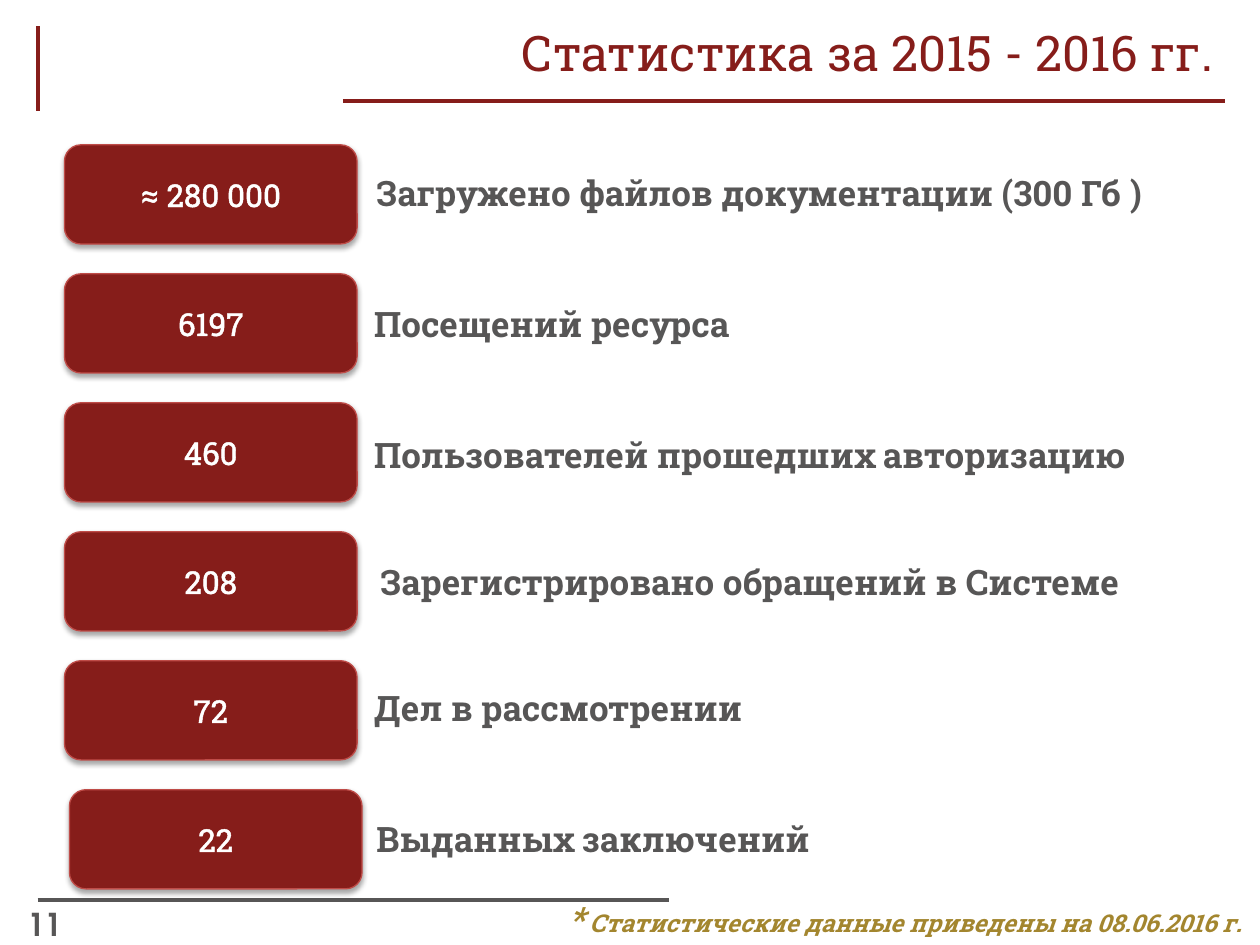
from lxml import etree
from pptx import Presentation
from pptx.dml.color import RGBColor
from pptx.enum.shapes import MSO_CONNECTOR, MSO_SHAPE
from pptx.enum.text import MSO_ANCHOR, MSO_AUTO_SIZE, PP_ALIGN
from pptx.oxml import parse_xml
from pptx.oxml.ns import nsdecls, qn
from pptx.util import Cm, Pt

STRAIGHT = MSO_CONNECTOR.STRAIGHT
ROUNDED = MSO_SHAPE.ROUNDED_RECTANGLE
MIDDLE = MSO_ANCHOR.MIDDLE
NO_FIT = MSO_AUTO_SIZE.NONE
LEFT, CENTER, RIGHT = PP_ALIGN.LEFT, PP_ALIGN.CENTER, PP_ALIGN.RIGHT

FONT = "Roboto Slab"
NUMBER_FONT = "TeX Gyre Adventor"
RED, RED_EDGE = "861D1A", "BF4C48"
GREY, GOLD, WHITE = "575656", "A3862F", "FFFFFF"

# Value, box left, label, label left, label top (cm)
STATS = [
    ("≈ 280 000", 1.3, "Загружено файлов документации (300 Гб )", 7.34, 3.33),
    ("6197", 1.3, "Посещений ресурса", 7.29, 5.97),
    ("460", 1.3, "Пользователей прошедших авторизацию", 7.29, 8.61),
    ("208", 1.3, "Зарегистрировано обращений в Системе", 7.42, 11.18),
    ("72", 1.3, "Дел в рассмотрении", 7.29, 13.72),
    ("22", 1.4, "Выданных заключений", 7.34, 16.36),
]
FIRST_TOP, ROW_STEP = 2.92, 2.6


def rgb(value):
    return RGBColor.from_string(value)


def style(p, size, color, align=LEFT, bold=False, italic=False, name=FONT):
    p.alignment = align
    p.font.size = Pt(size)
    p.font.name = name
    p.font.bold = bold
    p.font.italic = italic
    p.font.color.rgb = rgb(color)


def add_line(s, x1, y1, x2, y2, color):
    line = s.shapes.add_connector(STRAIGHT, Cm(x1), Cm(y1), Cm(x2), Cm(y2))
    line.line.color.rgb = rgb(color)
    line.line.width = Pt(2.25)
    etree.SubElement(line._element.spPr, qn("a:effectLst"))


def add_title(s, text):
    title = s.shapes.title
    title.left, title.top = Cm(8.1), Cm(0.33)
    title.width, title.height = Cm(16.61), Cm(1.42)
    tf = title.text_frame
    tf.text = text
    tf.auto_size = NO_FIT
    tf.vertical_anchor = MIDDLE
    style(tf.paragraphs[0], 28, RED, RIGHT)


def add_text(s, x, y, w, h, text):
    tf = s.shapes.add_textbox(Cm(x), Cm(y), Cm(w), Cm(h)).text_frame
    tf.word_wrap = True
    tf.text = text
    return tf.paragraphs[0]


def add_shadow(shape):
    shape._element.spPr.append(parse_xml(
        f'<a:effectLst {nsdecls("a")}>'
        '<a:outerShdw blurRad="39370" dist="22860" dir="5400000" rotWithShape="0">'
        '<a:srgbClr val="000000"><a:alpha val="35000"/></a:srgbClr>'
        '</a:outerShdw></a:effectLst>'))


def outline_text(r, color):
    r.font._element.insert(0, parse_xml(
        f'<a:ln {nsdecls("a")} w="18415"><a:solidFill>'
        f'<a:srgbClr val="{color}"/></a:solidFill></a:ln>'))


def add_value_box(s, x, y, value):
    box = s.shapes.add_shape(ROUNDED, Cm(x), Cm(y), Cm(5.9), Cm(2))
    box.fill.solid()
    box.fill.fore_color.rgb = rgb(RED)
    box.line.color.rgb = rgb(RED_EDGE)
    box.line.width = Pt(0.75)
    add_shadow(box)
    tf = box.text_frame
    tf.text = value
    tf.vertical_anchor = MIDDLE
    p = tf.paragraphs[0]
    style(p, 18, WHITE, CENTER)
    outline_text(p.runs[0], WHITE)


def main():
    prs = Presentation()
    prs.slide_width, prs.slide_height = Cm(25.4), Cm(19.05)
    s = prs.slides.add_slide(prs.slide_layouts[5])

    # Frame lines and title
    add_line(s, 0.76, 0.53, 0.76, 2.24, RED)
    add_line(s, 0.76, 18.14, 13.49, 18.14, GREY)
    add_line(s, 6.91, 2.03, 24.69, 2.03, RED)
    add_title(s, "Статистика за 2015 - 2016 гг.")

    # Statistics rows
    for i, (value, box_x, label, label_x, label_y) in enumerate(STATS):
        add_value_box(s, box_x, FIRST_TOP + i * ROW_STEP, value)
        p = add_text(s, label_x, label_y, 17.2, 1.11, label)
        style(p, 20, GREY, bold=True)

    # Footnote with a larger asterisk
    p = add_text(s, 7.49, 17.96, 17.81, 1.11, "*")
    style(p, 20, GOLD, RIGHT, bold=True, italic=True)
    r = p.add_run()
    r.text = " Статистические данные приведены на 08.06.2016 г."
    r.font.size = Pt(14)

    # Page number
    p = add_text(s, 0.3, 18.11, 1.6, 0.94, "11")
    style(p, 18, GREY, bold=True, name=NUMBER_FONT)

    prs.save("out.pptx")


if __name__ == "__main__":
    main()
